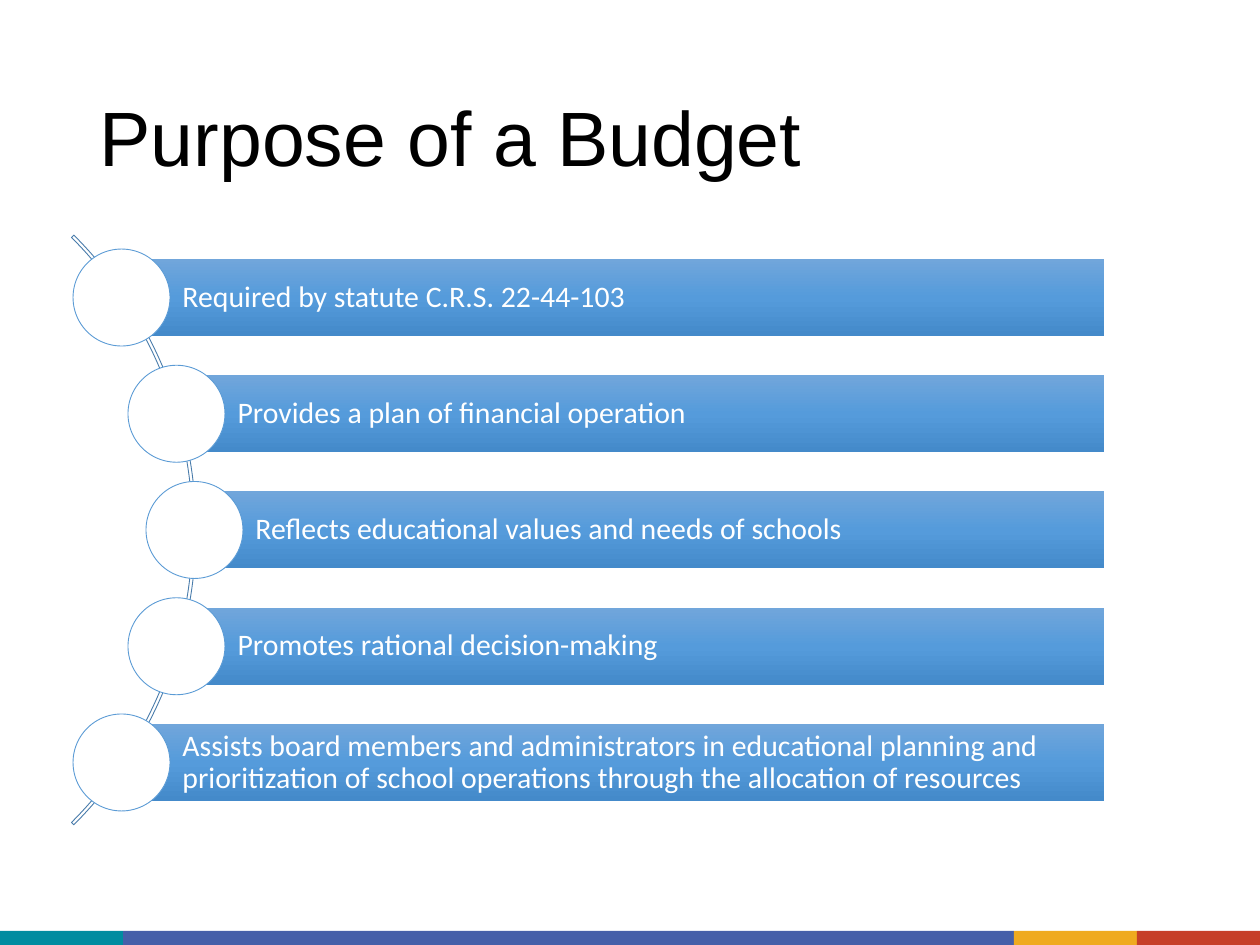
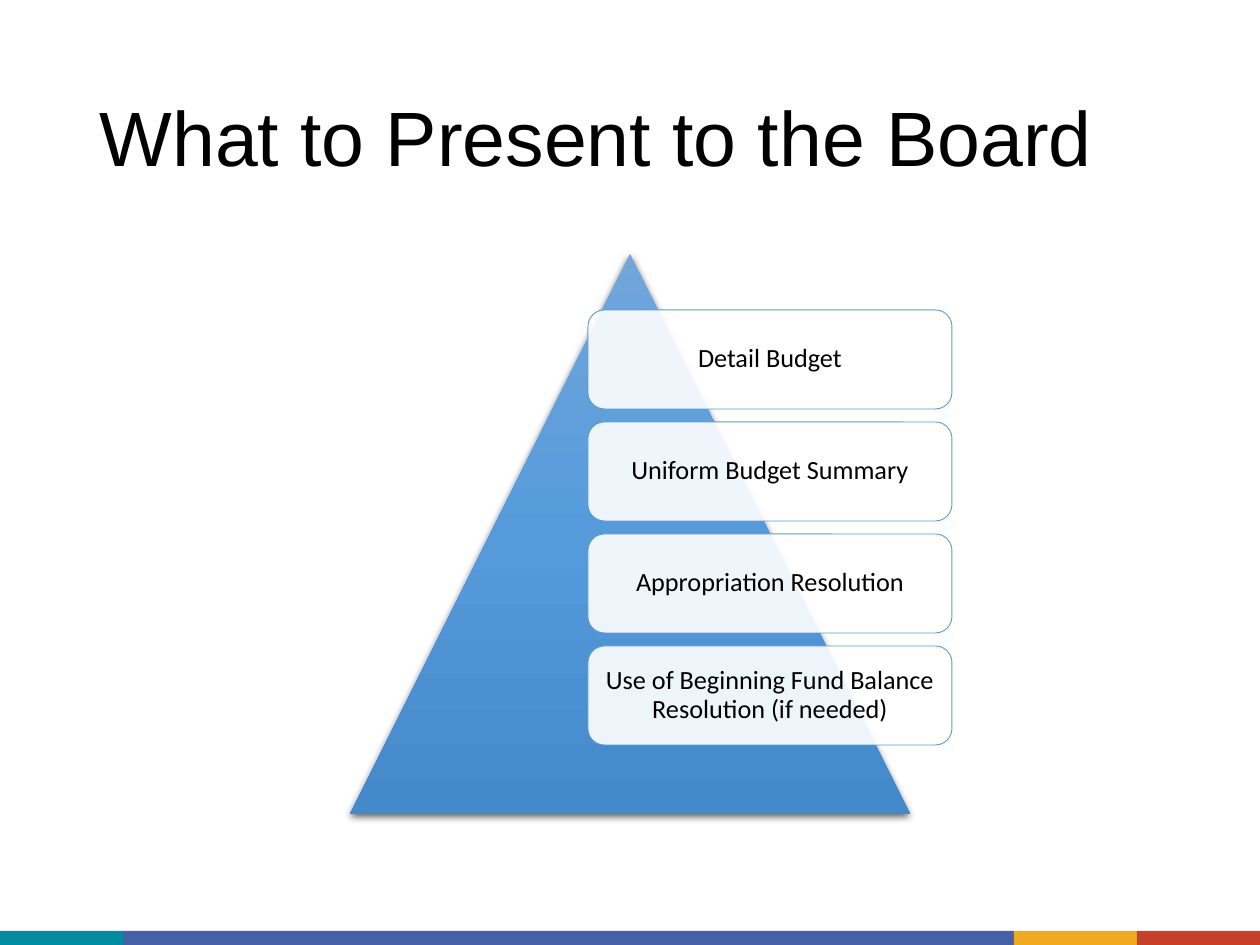
"""Build two budget slides: a list along an arc and a pyramid of documents."""
from dataclasses import dataclass

from lxml.etree import SubElement
from pptx import Presentation
from pptx.dml.color import RGBColor
from pptx.enum.shapes import MSO_SHAPE as Preset
from pptx.enum.text import MSO_ANCHOR as Anchor, MSO_AUTO_SIZE as AutoSize, PP_ALIGN as Align
from pptx.oxml.ns import qn
from pptx.util import Pt

EMU_PER_PX = 914400 / 126
PAGE_SIZE = (1260, 945)


@dataclass(frozen=True)
class Theme:
    """Colours, fonts and sizes shared by the slides."""
    black: str = "000000"
    white: str = "FFFFFF"
    outline: str = "5B9BD5"
    arc: str = "497CAB"
    gradient: tuple = ((0, "71A6DB"), (50, "559BDB"), (100, "448ACA"))
    bands: tuple = (("008CA0", 123), ("455FA9", 891), ("EFAA1F", 123), ("C63F28", 123))
    title_font: str = "Arial"
    body_font: str = "Calibri"
    title_size: int = 44
    bar_size: int = 17
    card_size: int = 15
    hairline: float = 0.5
    spacing: float = 0.9


THEME = Theme()


def px(length):
    """Turn pixels into EMU."""
    return round(length * EMU_PER_PX)


def color(code):
    """Turn a hex code into a colour."""
    return RGBColor.from_string(code)


def add_preset(page, preset, box, fill=None, line=None):
    """Add a flat preset shape with an optional fill and hairline."""
    shape = page.shapes.add_shape(preset, *map(px, box))
    shape.shadow.inherit = False
    if fill:
        shape.fill.solid()
        shape.fill.fore_color.rgb = color(fill)
    else:
        shape.fill.background()
    if line:
        shape.line.color.rgb = color(line)
        shape.line.width = Pt(THEME.hairline)
    else:
        shape.line.fill.background()
    return shape


def fill_gradient(shape):
    """Fill a shape with the theme gradient from top to bottom."""
    shape.fill.gradient()
    shape.fill.gradient_angle = 270
    stops = shape.element.spPr.find(".//" + qn("a:gsLst"))
    for stop in list(stops):
        stops.remove(stop)
    for percent, code in THEME.gradient:
        stop = SubElement(stops, qn("a:gs"), pos=str(percent * 1000))
        SubElement(stop, qn("a:srgbClr"), val=code)


def add_shadow(shape):
    """Give a shape a soft shadow below it."""
    effects = shape.element.spPr.find(qn("a:effectLst"))
    shadow = SubElement(effects, qn("a:outerShdw"), blurRad=str(Pt(4.5)), dist=str(Pt(1.5)),
                        dir="5400000", algn="ctr", rotWithShape="0")
    tint = SubElement(shadow, qn("a:srgbClr"), val=THEME.black)
    SubElement(tint, qn("a:alpha"), val="63000")


def set_opacity(shape, percent):
    """Make a solid fill partly transparent."""
    tint = shape.element.spPr.find(qn("a:solidFill")).find(qn("a:srgbClr"))
    SubElement(tint, qn("a:alpha"), val=str(percent * 1000))


def write(shape, text, font, size, code, align, insets=None):
    """Write one formatted paragraph in the middle of a shape."""
    frame = shape.text_frame
    frame.word_wrap = True
    frame.auto_size = AutoSize.NONE
    frame.vertical_anchor = Anchor.MIDDLE
    if insets:
        (frame.margin_left, frame.margin_top,
         frame.margin_right, frame.margin_bottom) = map(px, insets)
    para = frame.paragraphs[0]
    para.alignment = align
    para.line_spacing = THEME.spacing
    span = para.add_run()
    span.text = text
    span.font.name = font
    span.font.size = Pt(size)
    span.font.color.rgb = color(code)


def add_bands(layout, page, box):
    """Draw the footer bands and move them to the layout."""
    left, top, height = box
    for code, width in THEME.bands:
        band = add_preset(page, Preset.RECTANGLE, (left, top, width, height), code)
        layout.shapes.element.append(band.element)
        left += width


def add_page(deck, layout, title):
    """Add a slide with its title placed and formatted."""
    page = deck.slides.add_slide(layout)
    holder = page.shapes.title
    holder.left, holder.top, holder.width, holder.height = map(px, (87, 50, 1086, 183))
    write(holder, title, THEME.title_font, THEME.title_size, THEME.black, Align.LEFT)
    return page


def add_arc_list(page, box, rows):
    """Draw bars whose circles follow an arc."""
    left, top, width, height = box
    circle, bar_height, arc_size = 97, 77, 834
    middle = top + height / 2
    arc = add_preset(page, Preset.BLOCK_ARC,
                     (left + 123 - arc_size, middle - arc_size / 2, arc_size, arc_size),
                     line=THEME.arc)
    for index, value in enumerate((189, 27, 0.004)):
        arc.adjustments[index] = value
    pitch = (height - circle) / (len(rows) - 1)
    for index, (shift, text) in enumerate(rows):
        center_x = left + shift + circle / 2
        center_y = top + circle / 2 + index * pitch
        bar = add_preset(page, Preset.RECTANGLE,
                         (center_x, center_y - bar_height / 2, left + width - center_x, bar_height))
        fill_gradient(bar)
        write(bar, text, THEME.body_font, THEME.bar_size, THEME.white, Align.LEFT, (61, 6, 6, 6))
        add_preset(page, Preset.OVAL, (left + shift, center_y - circle / 2, circle, circle),
                   THEME.white, THEME.outline)


def add_pyramid(page, box, labels):
    """Draw a triangle with a column of cards over its right half."""
    left, top, width, height = box
    card_width, card_height, pitch = 364, 99, 112
    triangle = add_preset(page, Preset.ISOSCELES_TRIANGLE, box)
    fill_gradient(triangle)
    add_shadow(triangle)
    for index, text in enumerate(labels):
        card = add_preset(page, Preset.ROUNDED_RECTANGLE,
                          (left + 238, top + height / 10 + index * pitch, card_width, card_height),
                          THEME.white, THEME.outline)
        set_opacity(card, 90)
        write(card, text, THEME.body_font, THEME.card_size, THEME.black, Align.CENTER, (8, 8, 8, 8))


def main():
    """Build and save the deck."""
    deck = Presentation()
    deck.slide_width, deck.slide_height = map(px, PAGE_SIZE)
    layout = deck.slide_layouts.get_by_name("Title Only")

    purpose = add_page(deck, layout, "Purpose of a Budget")
    add_bands(layout, purpose, (0, 931, 14))
    add_arc_list(purpose, (73, 249, 1031, 562), (
        (0, "Required by statute C.R.S. 22-44-103"),
        (55, "Provides a plan of financial operation"),
        (73, "Reflects educational values and needs of schools"),
        (55, "Promotes rational decision-making"),
        (0, "Assists board members and administrators in educational planning and "
            "prioritization of school operations through the allocation of resources"),
    ))

    board = add_page(deck, layout, "What to Present to the Board")
    add_pyramid(board, (350, 254, 560, 560), (
        "Detail Budget",
        "Uniform Budget Summary",
        "Appropriation Resolution",
        "Use of Beginning Fund Balance Resolution (if needed)",
    ))
    deck.save("out.pptx")


if __name__ == "__main__":
    main()
